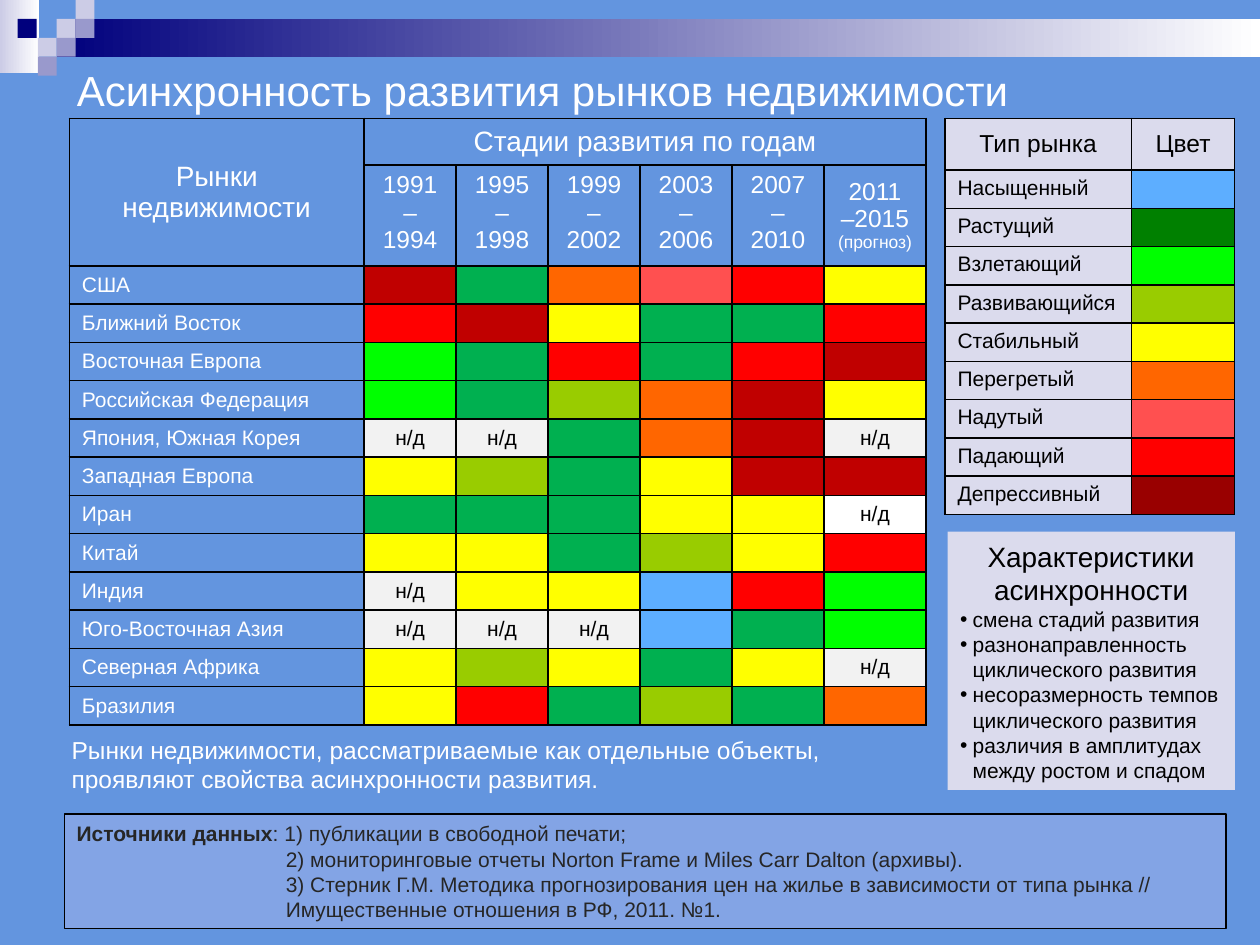
import pptx
import pptx.util
import pptx.dml.color
import pptx.enum.shapes
import pptx.enum.text
import pptx.oxml.ns
import lxml.etree

Inches, Pt = pptx.util.Inches, pptx.util.Pt
RGB = pptx.dml.color.RGBColor
ALIGN = pptx.enum.text.PP_ALIGN
MIDDLE = pptx.enum.text.MSO_ANCHOR.MIDDLE
TOP = pptx.enum.text.MSO_ANCHOR.TOP
RECT = pptx.enum.shapes.MSO_SHAPE.RECTANGLE

BLUE = RGB(0x63, 0x95, 0xDF)
NAVY = RGB(0x00, 0x00, 0x7D)
PALE = RGB(0xCC, 0xCC, 0xE6)
LILAC = RGB(0x99, 0x99, 0xCC)
PANEL = RGB(0xDB, 0xDB, 0xED)
SOURCE = RGB(0x83, 0xA4, 0xE5)
DARK = RGB(0x26, 0x26, 0x26)
BLACK = RGB(0, 0, 0)
WHITE = RGB(255, 255, 255)

# Stage colours by letter; N and W mean "no data"
STAGE = {
    "D": RGB(0xC0, 0x00, 0x00), "G": RGB(0x00, 0xB0, 0x50),
    "O": RGB(0xFF, 0x66, 0x00), "P": RGB(0xFF, 0x50, 0x50),
    "R": RGB(0xFF, 0x00, 0x00), "Y": RGB(0xFF, 0xFF, 0x00),
    "L": RGB(0x00, 0xFF, 0x00), "V": RGB(0x99, 0xCC, 0x00),
    "B": RGB(0x5D, 0xAE, 0xFF), "N": RGB(0xF2, 0xF2, 0xF2), "W": WHITE,
}
YEARS = ["1991–1994", "1995–1998", "1999–2002", "2003–2006", "2007–2010"]
MARKETS = [
    ("США", "DGOPRY"), ("Ближний Восток", "RDYGGR"),
    ("Восточная Европа", "LGRGRD"), ("Российская Федерация", "LGVODY"),
    ("Япония, Южная Корея", "NNGODN"), ("Западная Европа", "YVGYDD"),
    ("Иран", "GGGYYW"), ("Китай", "YYGVYR"), ("Индия", "NYYBRL"),
    ("Юго-Восточная Азия", "NNNBGL"), ("Северная Африка", "YVYGYN"),
    ("Бразилия", "YRGVGO"),
]
TYPES = [
    ("Насыщенный", STAGE["B"]), ("Растущий", RGB(0x00, 0x80, 0x00)),
    ("Взлетающий", STAGE["L"]), ("Развивающийся", STAGE["V"]),
    ("Стабильный", STAGE["Y"]), ("Перегретый", STAGE["O"]),
    ("Надутый", STAGE["P"]), ("Падающий", STAGE["R"]),
    ("Депрессивный", RGB(0x99, 0x00, 0x00)),
]
TRAITS = [
    "смена стадий развития",
    "разнонаправленность циклического развития",
    "несоразмерность темпов циклического развития",
    "различия в амплитудах между ростом и спадом",
]


def add_tag(node, name, **attrs):
    return lxml.etree.SubElement(node, pptx.oxml.ns.qn(name), **attrs)


def style(para, size, color, align=ALIGN.LEFT):
    para.alignment = align
    para.space_before = Pt(0)
    for run in para.runs:
        run.font.name, run.font.size = "Arial", Pt(size)
        run.font.color.rgb = color


def indent(para, left, first=0, bullet=None):
    props = para._p.get_or_add_pPr()
    props.set("marL", str(Inches(left)))
    props.set("indent", str(Inches(first)))
    if bullet:
        add_tag(props, "a:buChar", char=bullet)
    else:
        add_tag(props, "a:buNone")


def place(shape, left, top, width, height):
    shape.left, shape.top = Inches(left), Inches(top)
    shape.width, shape.height = Inches(width), Inches(height)


def add_rect(slide, left, top, width, height, color, fade=False):
    rect = slide.shapes.add_shape(RECT, Inches(left), Inches(top),
                                  Inches(width), Inches(height))
    rect.shadow.inherit = False
    rect.line.fill.background()
    if fade:
        rect.fill.gradient()
        rect.fill.gradient_angle = 0
        for stop, tone in zip(rect.fill.gradient_stops, (color, WHITE)):
            stop.color.rgb = tone
    else:
        rect.fill.solid()
        rect.fill.fore_color.rgb = color
    return rect


def fill_cell(cell, text="", size=12, color=BLACK, fill=None,
              align=ALIGN.CENTER, anchor=MIDDLE):
    cell.vertical_anchor = anchor
    props = cell._tc.get_or_add_tcPr()
    for side in "LRTB":
        edge = add_tag(props, "a:ln" + side, w=str(Pt(1)))
        add_tag(add_tag(edge, "a:solidFill"), "a:srgbClr", val=str(BLACK))
    if fill is None:
        cell.fill.background()
    else:
        cell.fill.solid()
        cell.fill.fore_color.rgb = fill
    para = cell.text_frame.paragraphs[0]
    if text:
        para.text = text
        style(para, size, color, align)
    else:
        add_tag(para._p, "a:endParaRPr", sz=str(size * 100))


def add_grid(slide, left, top, cols, rows):
    frame = slide.shapes.add_table(len(rows), len(cols), Inches(left), Inches(top),
                                   Inches(sum(cols)), Inches(sum(rows)))
    grid = frame.table
    grid.first_row = grid.horz_banding = False
    for col, width in zip(grid.columns, cols):
        col.width = Inches(width)
    for row, height in zip(grid.rows, rows):
        row.height = Inches(height)
    return grid


def add_decor(slide):
    add_rect(slide, 0, 0, 0.31, 0.58, PALE, fade=True)
    add_rect(slide, 0.45, 0.15, 9.55, 0.3, NAVY, fade=True)
    squares = [(0.45, 0.15, PALE), (0.6, 0, PALE), (0.6, 0.15, LILAC),
               (0.3, 0.3, PALE), (0.14, 0.15, NAVY), (0.45, 0.3, LILAC),
               (0.3, 0.45, LILAC)]
    for left, top, color in squares:
        add_rect(slide, left, top, 0.15, 0.15, color)


def add_stages(slide):
    grid = add_grid(slide, 0.55, 0.94, [2.34] + [0.73] * 5 + [0.81],
                    [0.37, 0.8] + [0.3] * len(MARKETS))
    # Header rows
    heads = {(0, 0): "Рынки недвижимости", (0, 1): "Стадии развития по годам"}
    for row in range(2):
        for col in range(7):
            if row and col:
                text = (YEARS + ["2011"])[col - 1]
                fill_cell(grid.cell(row, col), text, 14, WHITE,
                          anchor=MIDDLE if col == 6 else TOP)
            else:
                fill_cell(grid.cell(row, col), heads.get((row, col), ""), 16, WHITE)
    grid.cell(0, 0).merge(grid.cell(1, 0))
    grid.cell(0, 1).merge(grid.cell(0, 6))
    para = grid.cell(1, 6).text_frame.add_paragraph()
    para.text = "–2015 "
    para.add_run().text = "(прогноз)"
    style(para, 14, WHITE, ALIGN.CENTER)
    para.runs[1].font.size = Pt(10)
    # Market rows
    for row, (name, codes) in enumerate(MARKETS, 2):
        fill_cell(grid.cell(row, 0), name, 12, WHITE, align=ALIGN.LEFT)
        for col, code in enumerate(codes, 1):
            text = "н/д" if code in "NW" else ""
            fill_cell(grid.cell(row, col), text, fill=STAGE[code])


def add_legend(slide):
    grid = add_grid(slide, 7.5, 0.94, [1.48, 0.82], [0.41] + [0.3] * len(TYPES))
    for col, text in enumerate(["Тип рынка", "Цвет"]):
        fill_cell(grid.cell(0, col), text, 14, fill=PANEL)
    for row, (name, color) in enumerate(TYPES, 1):
        fill_cell(grid.cell(row, 0), name, fill=PANEL, align=ALIGN.LEFT, anchor=TOP)
        fill_cell(grid.cell(row, 1), fill=color)


def set_traits(body):
    place(body, 7.52, 4.22, 2.28, 2.05)
    body.fill.solid()
    body.fill.fore_color.rgb = PANEL
    frame = body.text_frame
    frame.auto_size = pptx.enum.text.MSO_AUTO_SIZE.NONE
    frame.vertical_anchor = MIDDLE
    head = frame.paragraphs[0]
    head.text = "Характеристики асинхронности"
    style(head, 16, BLACK, ALIGN.CENTER)
    indent(head, 0)
    for text in TRAITS:
        para = frame.add_paragraph()
        para.text = text
        style(para, 12, BLACK)
        indent(para, 0.1, -0.1, "•")


def add_note(slide):
    box = slide.shapes.add_textbox(Inches(0.47), Inches(5.78), Inches(7.03), Inches(0.57))
    frame = box.text_frame
    frame.word_wrap = True
    frame.vertical_anchor = MIDDLE
    frame.text = ("Рынки недвижимости, рассматриваемые как отдельные объекты, "
                  "проявляют свойства асинхронности развития.")
    style(frame.paragraphs[0], 14, WHITE)


def add_sources(slide):
    rect = add_rect(slide, 0.51, 6.46, 9.22, 0.91, SOURCE)
    rect.line.color.rgb = BLACK
    rect.line.width = Pt(0.75)
    frame = rect.text_frame
    frame.vertical_anchor = MIDDLE
    frame.text = "\n".join([
        "Источники данных",
        "2) мониторинговые отчеты Norton Frame и Miles Carr Dalton (архивы).",
        "3) Стерник Г.М. Методика прогнозирования цен на жилье в зависимости "
        "от типа рынка // Имущественные отношения в РФ, 2011. №1."])
    first, second, third = frame.paragraphs
    first.runs[0].font.bold = True
    first.add_run().text = ": 1) публикации в свободной печати;"
    for para, align in ((first, ALIGN.JUSTIFY), (second, ALIGN.JUSTIFY),
                        (third, ALIGN.LEFT)):
        style(para, 12, DARK, align)
        indent(para, 1.66, -1.66 if para is first else 0)


def main():
    deck = pptx.Presentation()
    deck.slide_width, deck.slide_height = Inches(10), Inches(7.5)
    slide = deck.slides.add_slide(deck.slide_layouts[1])
    slide.background.fill.solid()
    slide.background.fill.fore_color.rgb = BLUE
    add_decor(slide)
    # Title
    title = slide.shapes.title
    place(title, 0.51, 0.52, 9.37, 0.39)
    title.text_frame.text = "Асинхронность развития рынков недвижимости"
    title.text_frame.vertical_anchor = MIDDLE
    title.text_frame.auto_size = pptx.enum.text.MSO_AUTO_SIZE.NONE
    style(title.text_frame.paragraphs[0], 24, WHITE)
    # Tables and texts
    add_stages(slide)
    add_legend(slide)
    set_traits(slide.placeholders[1])
    add_note(slide)
    add_sources(slide)
    deck.save("out.pptx")


if __name__ == "__main__":
    main()
